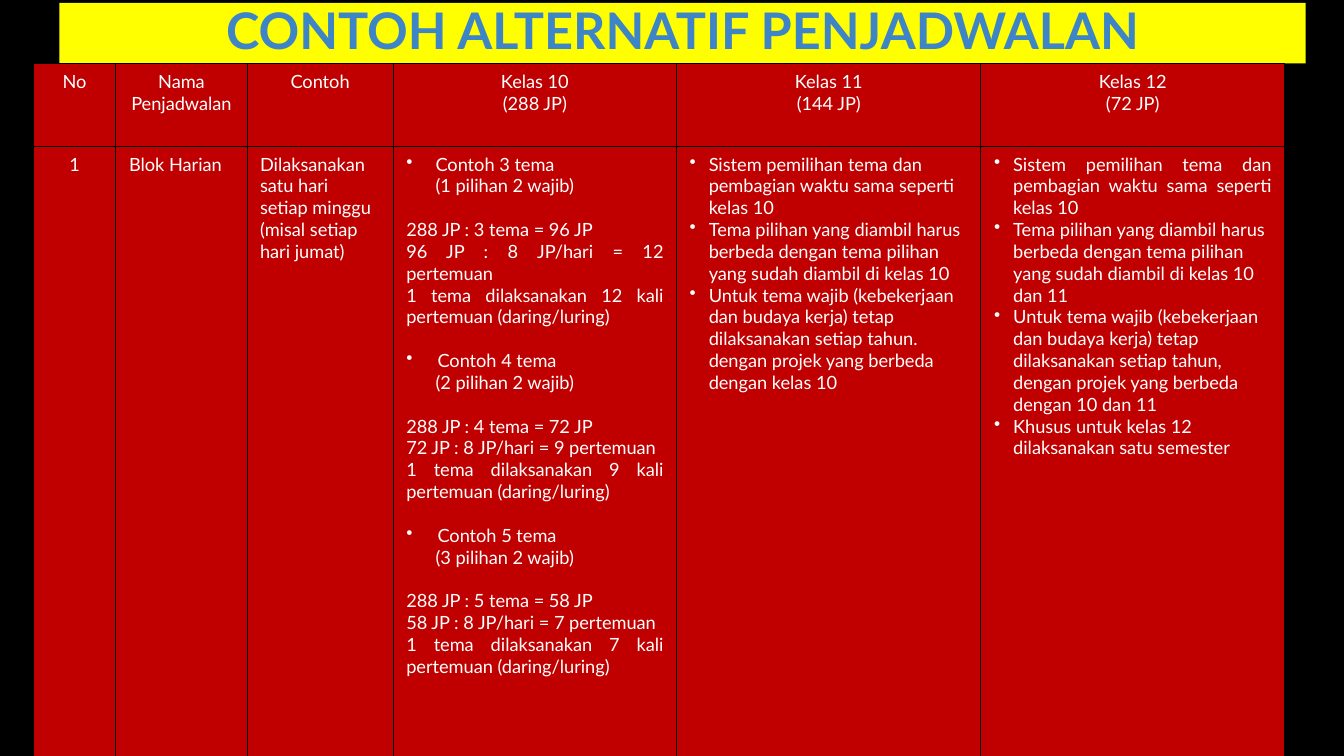
"""Build the slide on alternative scheduling for three school grades."""
import pptx
import pptx.util
import pptx.dml.color
import pptx.enum.shapes
import pptx.enum.text
import pptx.oxml
import pptx.oxml.ns

Inches = pptx.util.Inches
Pt = pptx.util.Pt
ALIGN = pptx.enum.text.PP_ALIGN


def color(code):
    return pptx.dml.color.RGBColor.from_string(code)


def write(para, text, size=13, tint="FFFFFF", bold=False, align=ALIGN.LEFT,
          left=0, bullet=False, before=0, line=None, face="Lato"):
    para.alignment = align
    if before:
        para.space_before = Pt(before)
    if line:
        para.line_spacing = line
    props = para._p.get_or_add_pPr()
    props.set("marL", str(Inches(left)))
    props.set("indent", str(Inches(-left if bullet else 0)))
    if bullet:
        mark = pptx.oxml.parse_xml(
            f'<a:buChar {pptx.oxml.ns.nsdecls("a")} char="•"/>')
        props.append(mark)
    run = para.add_run()
    run.text = text
    font = run.font
    font.name, font.size, font.bold = face, Pt(size), bold
    font.color.rgb = color(tint)


class Deck:
    def __init__(self):
        self.show = pptx.Presentation()
        self.show.slide_width = Inches(13.33)
        self.show.slide_height = Inches(7.5)
        self.slide = self.show.slides.add_slide(self.show.slide_layouts[6])
        self.back, self.red, self.yellow = "000000", "C00000", "FFFF00"
        self.blue = "3D85C6"
        fill = self.slide.background.fill
        fill.solid()
        fill.fore_color.rgb = color(self.back)

    def title(self, text, left, top, width, height):
        bar = self.slide.shapes.add_shape(
            pptx.enum.shapes.MSO_SHAPE.RECTANGLE,
            Inches(left), Inches(top), Inches(width), Inches(height))
        bar.shadow.inherit = False
        bar.fill.solid()
        bar.fill.fore_color.rgb = color(self.yellow)
        bar.line.fill.background()
        frame = bar.text_frame
        frame.word_wrap = True
        frame.vertical_anchor = pptx.enum.text.MSO_ANCHOR.MIDDLE
        frame.margin_left = frame.margin_right = Inches(0.1)
        frame.margin_top = frame.margin_bottom = Inches(0.1)
        write(frame.paragraphs[0], text, size=36, tint=self.blue, bold=True,
              align=ALIGN.CENTER, line=0.9)

    def cell(self, cell, paras):
        props = cell._tc.get_or_add_tcPr()
        for side in "LRTB":
            props.append(pptx.oxml.parse_xml(
                f'<a:ln{side} {pptx.oxml.ns.nsdecls("a")} w="{Pt(0.75)}">'
                f'<a:solidFill><a:srgbClr val="{self.back}"/></a:solidFill>'
                f'</a:ln{side}>'))
        cell.fill.solid()
        cell.fill.fore_color.rgb = color(self.red)
        cell.margin_left = cell.margin_right = Inches(0.13)
        cell.margin_top = cell.margin_bottom = Inches(0.07)
        frame = cell.text_frame
        for i, (text, form) in enumerate(paras):
            para = frame.add_paragraph() if i else frame.paragraphs[0]
            write(para, text, **form)

    def table(self, left, top, widths, heights, rows):
        grid = self.slide.shapes.add_table(
            len(heights), len(widths), Inches(left), Inches(top),
            Inches(sum(widths)), Inches(sum(heights))).table
        grid.first_row = grid.horz_banding = False
        for col, width in zip(grid.columns, widths):
            col.width = Inches(width)
        for row, height, cells in zip(grid.rows, heights, rows):
            row.height = Inches(height)
            for cell, paras in zip(row.cells, cells):
                self.cell(cell, paras)


def center(*lines):
    return [(line, {"align": ALIGN.CENTER}) for line in lines]


def points(*lines):
    return [(line, {"left": 0.19, "bullet": True}) for line in lines]


def blocks(plans, gap=15.6):
    paras = []
    for themes, hours, meets in plans:
        first = not paras
        just = {"align": ALIGN.JUSTIFY}
        paras += [
            (f"Contoh {themes} tema", {
                "left": 0.29 if first else 0.31, "bullet": True,
                "before": 0 if first else gap}),
            (f"({themes - 2} pilihan 2 wajib)", {"left": 0.29}),
            (f"288 JP : {themes} tema = {hours} JP", {**just, "before": gap}),
            (f"{hours} JP : 8 JP/hari = {meets} pertemuan", just),
            (f"1 tema dilaksanakan {meets} kali pertemuan (daring/luring)",
             just)]
    return paras


def main():
    head = [center("No"), center("Nama Penjadwalan"), center("Contoh"),
            center("Kelas 10", "(288 JP)"), center("Kelas 11", "(144 JP)"),
            center("Kelas 12", "(72 JP)")]
    same = "Sistem pemilihan tema dan pembagian waktu sama seperti kelas 10"
    pick = ("Tema pilihan yang diambil harus berbeda dengan tema pilihan "
            "yang sudah diambil di kelas 10")
    must = ("Untuk tema wajib (kebekerjaan dan budaya kerja) tetap "
            "dilaksanakan setiap tahun")
    last = points(
        same, pick + " dan 11",
        must + ", dengan projek yang berbeda dengan 10 dan 11",
        "Khusus untuk kelas 12 dilaksanakan satu semester")
    last[0][1]["align"] = ALIGN.JUSTIFY
    body = [
        center("1"),
        [("Blok Harian", {})],
        [("Dilaksanakan satu hari setiap minggu (misal setiap hari jumat)",
          {})],
        blocks([(3, 96, 12), (4, 72, 9), (5, 58, 7)]),
        points(same, pick,
               must + ". dengan projek yang berbeda dengan kelas 10"),
        last]
    deck = Deck()
    deck.title("CONTOH ALTERNATIF PENJADWALAN", 0.59, 0.03, 12.36, 0.6)
    deck.table(0.33, 0.63, [0.82, 1.3, 1.45, 2.81, 3.02, 3.01],
               [0.82, 6.05], [head, body])
    deck.show.save("out.pptx")


if __name__ == "__main__":
    main()
